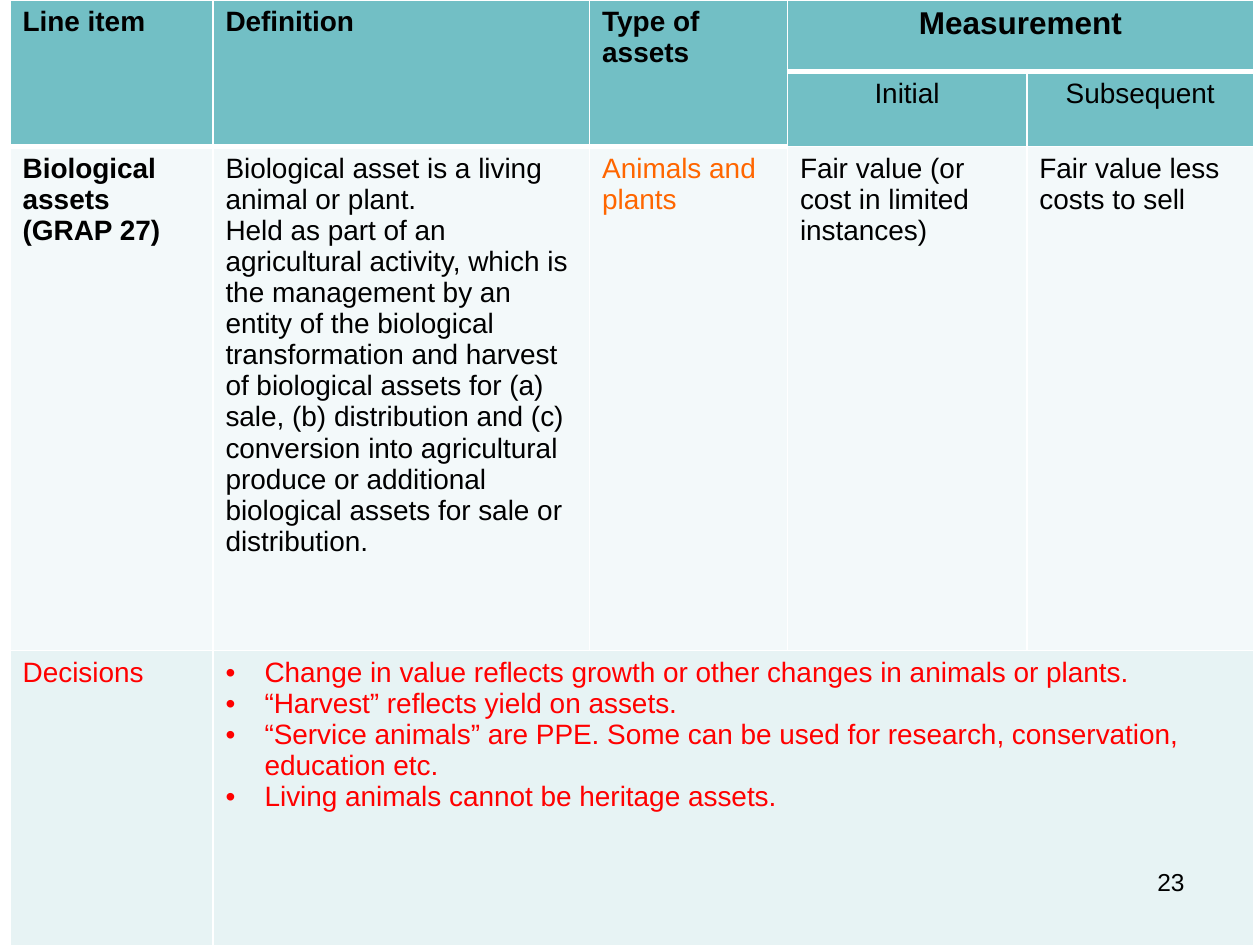
import pptx
import pptx.util
import pptx.dml.color
import pptx.enum.text
import pptx.oxml
import pptx.oxml.ns
from lxml import etree

Inches = pptx.util.Inches
Pt = pptx.util.Pt
ALIGN = pptx.enum.text.PP_ALIGN

THEME = {
    "font": "Arial",
    "header": "72BFC5",
    "body": "F3F9FA",
    "decision": "E7F3F4",
    "border": "FFFFFF",
    "black": "000000",
    "orange": "FF6600",
    "red": "FF0000",
    "size": 16,
    "large": 18,
    "small": 14,
}


def add_borders(cell, bottom):
    properties = cell._tc.get_or_add_tcPr()
    for side, width in (("L", 1), ("R", 1), ("T", 1), ("B", bottom)):
        line = etree.SubElement(properties, pptx.oxml.ns.qn(f"a:ln{side}"), w=str(Pt(width)))
        solid = etree.SubElement(line, pptx.oxml.ns.qn("a:solidFill"))
        etree.SubElement(solid, pptx.oxml.ns.qn("a:srgbClr"), val=THEME["border"])


def write_text(frame, lines, color="black", size="size", bold=False, align=ALIGN.LEFT, bullet=False):
    for index, line in enumerate(lines):
        para = frame.paragraphs[0] if index == 0 else frame.add_paragraph()
        para.alignment = align
        if bullet:
            properties = para._p.get_or_add_pPr()
            properties.set("marL", str(Inches(0.31)))
            properties.set("indent", str(-Inches(0.31)))
            etree.SubElement(properties, pptx.oxml.ns.qn("a:buFont"), typeface=THEME["font"])
            etree.SubElement(properties, pptx.oxml.ns.qn("a:buChar"), char="•")
        span = para.add_run()
        span.text = line
        formats = {"name": THEME["font"], "size": Pt(THEME[size]), "bold": bold}
        for name, value in formats.items():
            setattr(span.font, name, value)
        span.font.color.rgb = pptx.dml.color.RGBColor.from_string(THEME[color])


deck = pptx.Presentation()
deck.slide_width = Inches(10)
deck.slide_height = Inches(7.5)
page = deck.slides.add_slide(deck.slide_layouts[6])

columns = [1.61, 2.99, 1.57, 1.9, 1.8]
rows = [0.57, 0.59, 4, 2.34]
row_fills = ["header", "header", "body", "decision"]

frame = page.shapes.add_table(
    len(rows), len(columns), Inches(0.08), Inches(0), Inches(sum(columns)), Inches(sum(rows))
)
table = frame.table
table.first_row = False
table.horz_banding = False
for column, width in zip(table.columns, columns):
    column.width = Inches(width)
for row, height in zip(table.rows, rows):
    row.height = Inches(height)

for row_index, fill in enumerate(row_fills):
    for column_index in range(len(columns)):
        cell = table.cell(row_index, column_index)
        thick = row_index == 0 or (row_index == 1 and column_index < 3)
        add_borders(cell, 3 if thick else 1)
        cell.fill.solid()
        cell.fill.fore_color.rgb = pptx.dml.color.RGBColor.from_string(THEME[fill])

for column_index in range(3):
    table.cell(0, column_index).merge(table.cell(1, column_index))
table.cell(0, 3).merge(table.cell(0, 4))
table.cell(3, 1).merge(table.cell(3, 4))

heading = {"bold": True}
centered = {"align": ALIGN.CENTER}
contents = [
    (0, 0, ["Line item"], heading),
    (0, 1, ["Definition"], heading),
    (0, 2, ["Type of assets"], heading),
    (0, 3, ["Measurement"], {"bold": True, "size": "large", "align": ALIGN.CENTER}),
    (1, 3, ["Initial"], centered),
    (1, 4, ["Subsequent"], centered),
    (2, 0, ["Biological assets", "(GRAP 27)"], heading),
    (2, 1, [
        "Biological asset is a living animal or plant.",
        "Held as part of an agricultural activity, which is the management by an entity of the "
        "biological transformation and harvest of biological assets for (a) sale, (b) distribution "
        "and (c) conversion into agricultural produce or additional biological assets for sale or "
        "distribution.",
    ], {}),
    (2, 2, ["Animals and plants"], {"color": "orange"}),
    (2, 3, ["Fair value (or cost in limited instances)"], {}),
    (2, 4, ["Fair value less costs to sell"], {}),
    (3, 0, ["Decisions"], {"color": "red"}),
    (3, 1, [
        "Change in value reflects growth or other changes in animals or plants.",
        "“Harvest” reflects yield on assets.",
        "“Service animals” are PPE. Some can be used for research, conservation, education etc.",
        "Living animals cannot be heritage assets.",
    ], {"color": "red", "bullet": True}),
]
for row_index, column_index, lines, formats in contents:
    write_text(table.cell(row_index, column_index).text_frame, lines, **formats)

page_number = page.shapes.add_textbox(Inches(7.17), Inches(6.83), Inches(2.33), Inches(0.52))
page_number.text_frame.word_wrap = True
write_text(page_number.text_frame, ["23"], size="small", align=ALIGN.RIGHT)

deck.save("out.pptx")
